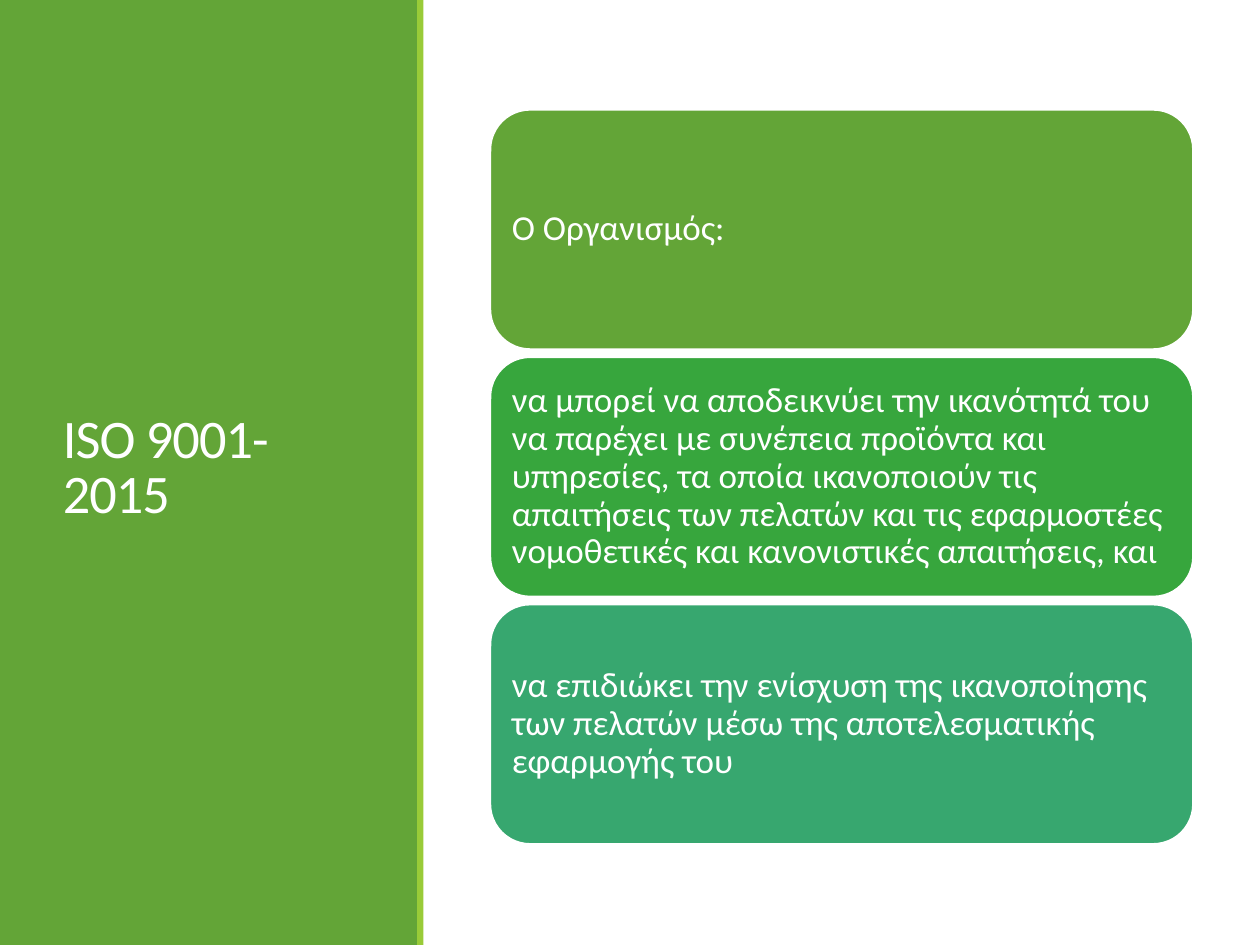
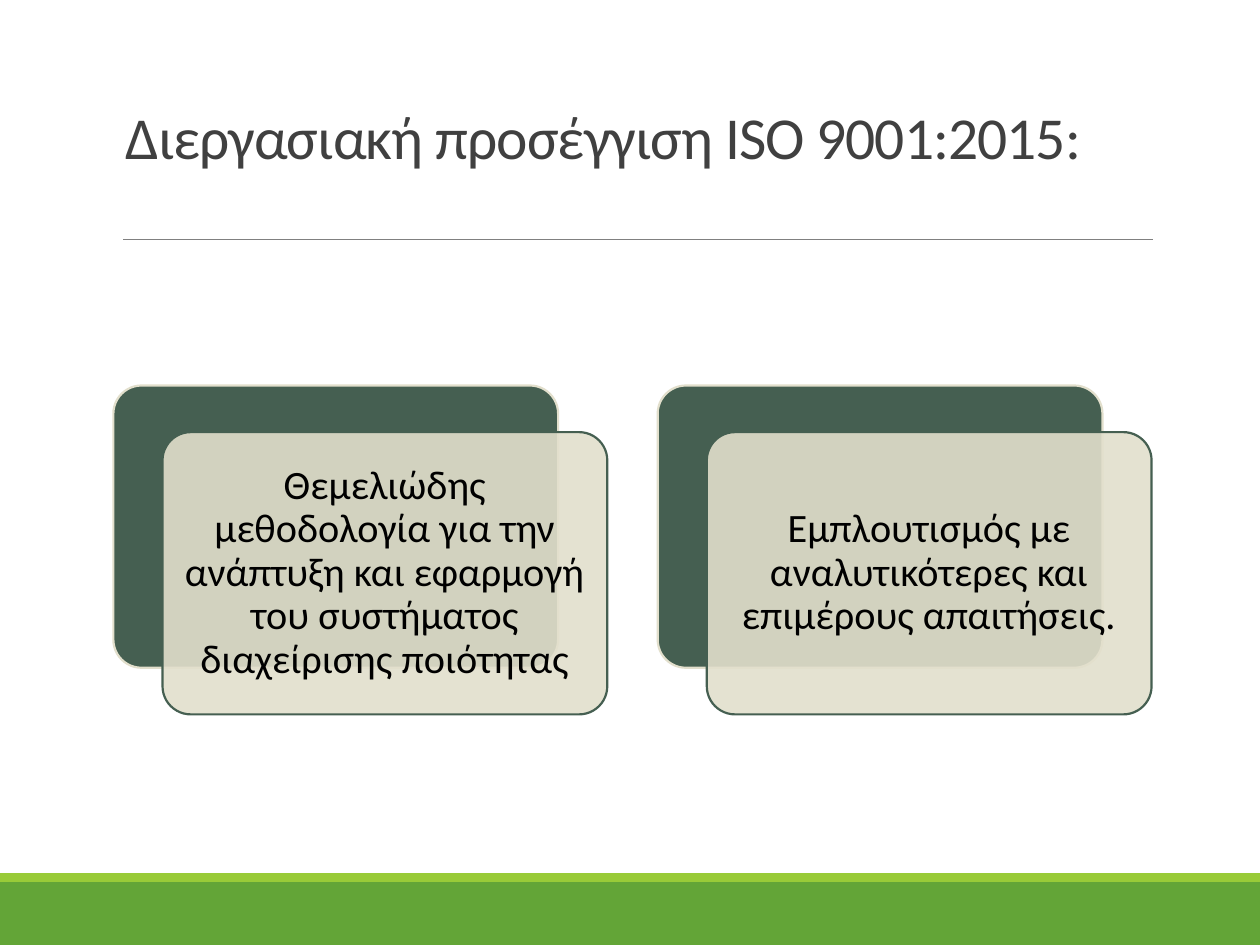
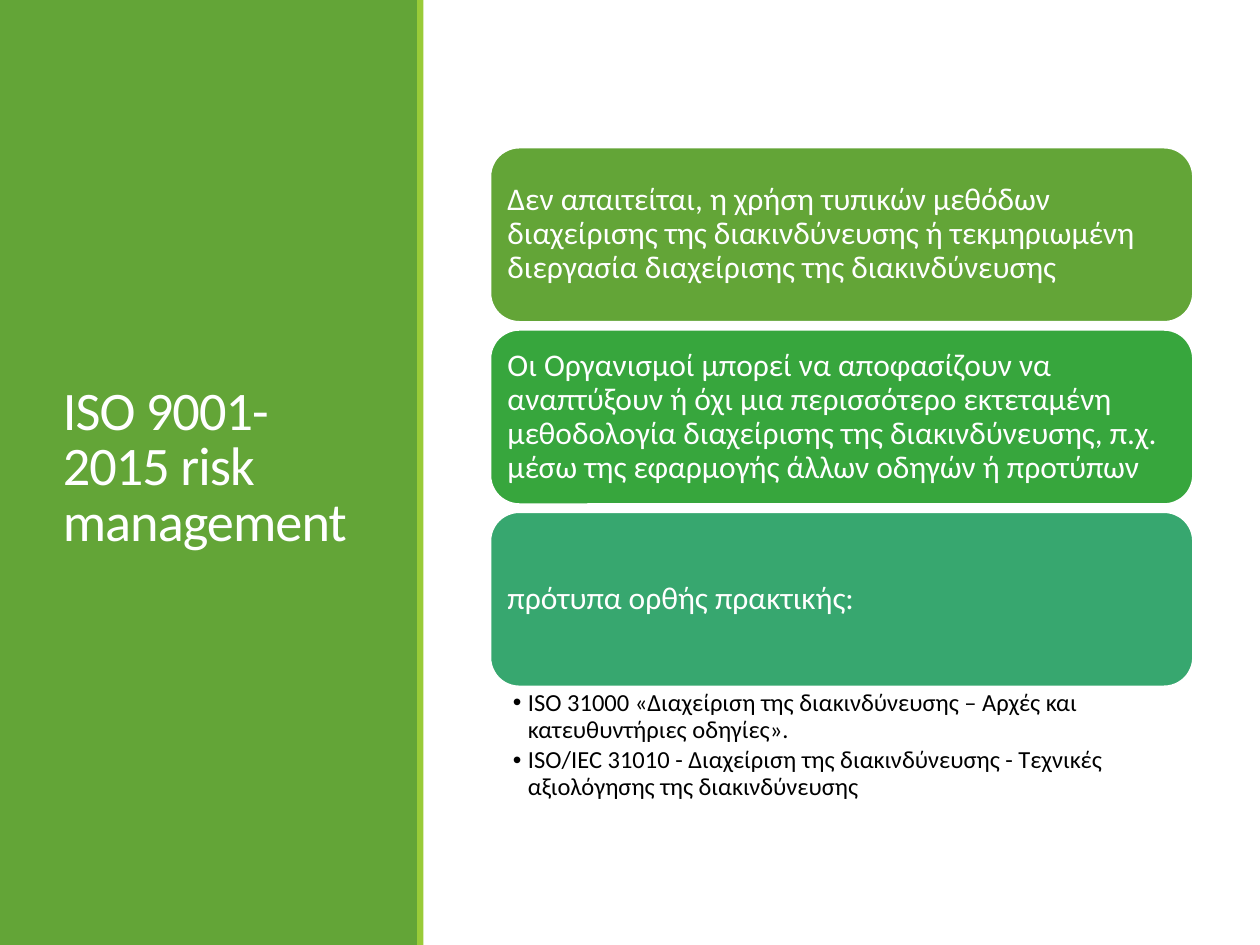
from typing import NamedTuple

from lxml.etree import SubElement
from pptx import Presentation
from pptx.dml.color import RGBColor
from pptx.enum.shapes import MSO_CONNECTOR, MSO_SHAPE
from pptx.enum.text import MSO_ANCHOR, PP_ALIGN
from pptx.oxml.ns import qn
from pptx.util import Inches, Pt

FONT = "Calibri"
CELL = 0.1
COLS, ROWS = 100, 75

GREEN = RGBColor(0x63, 0xA5, 0x37)
LIME = RGBColor(0x99, 0xCB, 0x38)
EMERALD = RGBColor(0x37, 0xA6, 0x3D)
TEAL = RGBColor(0x37, 0xA7, 0x6F)
FOREST = RGBColor(0x45, 0x5F, 0x51)
SAND = RGBColor(0xE2, 0xDF, 0xCC)
WHITE = RGBColor(0xFF, 0xFF, 0xFF)
BLACK = RGBColor(0, 0, 0)
CHARCOAL = RGBColor(0x40, 0x40, 0x40)
GREY = RGBColor(0x80, 0x80, 0x80)
PANEL_FILLS = (GREEN, EMERALD, TEAL)


class Box(NamedTuple):
    """A rectangle measured in grid columns and rows."""
    col: float
    row: float
    cols: float
    rows: float

    def inner(self, col, row, cols, rows):
        """Return a box placed relative to this one."""
        return Box(self.col + col, self.row + row, cols, rows)

    def emu(self):
        """Return left, top, width and height as lengths."""
        return [Inches(v * CELL) for v in self]


PAGE = Box(0, 0, COLS, ROWS)


def add_block(s, box, fill, line=None, kind=MSO_SHAPE.RECTANGLE, corner=None):
    """Draw a filled preset shape with an optional outline."""
    sp = s.shapes.add_shape(kind, *box.emu())
    sp.shadow.inherit = False
    sp.fill.solid()
    sp.fill.fore_color.rgb = fill
    if line is None:
        sp.line.fill.background()
    else:
        sp.line.color.rgb = line
        sp.line.width = Pt(1.25)
    if corner is not None:
        sp.adjustments[0] = corner
    return sp


def set_insets(tf, left, top, right, bottom):
    """Set the four text margins in inches."""
    tf.margin_left, tf.margin_top = Inches(left), Inches(top)
    tf.margin_right, tf.margin_bottom = Inches(right), Inches(bottom)


def write(sp, text, size, color, spacing=0.9, align=PP_ALIGN.LEFT,
          anchor=MSO_ANCHOR.MIDDLE):
    """Put one styled paragraph per line of text into a shape."""
    tf = sp.text_frame
    tf.word_wrap = True
    tf.vertical_anchor = anchor
    tf.text = text
    for p in tf.paragraphs:
        p.alignment = align
        p.line_spacing = spacing
        for r in p.runs:
            r.font.name = FONT
            r.font.size = Pt(size)
            r.font.color.rgb = color
    return tf


def add_title(s, box, text, size, color, anchor=MSO_ANCHOR.MIDDLE):
    """Write a tightly spaced slide title."""
    sp = s.shapes.add_textbox(*box.emu())
    tf = write(sp, text, size, color, spacing=0.85, anchor=anchor)
    for r in tf.paragraphs[0].runs:
        r._r.get_or_add_rPr().set("spc", "-50")


def add_sidebar(s, box, title):
    """Draw the green side band with its title and lime edge."""
    add_block(s, box, GREEN)
    add_title(s, box.inner(4, 5.7, 25.3, 63.1), title, 31, WHITE)
    add_block(s, box.inner(box.cols - 0.1, 0, 0.5, box.rows), LIME)


def add_footer(s, box):
    """Draw the two-tone band at the foot of a slide."""
    edge = 0.7
    add_block(s, box.inner(0, edge, box.cols, box.rows - edge), GREEN)
    add_block(s, box.inner(0, 0, box.cols, edge), LIME)


def add_panels(s, box, texts, size, inset):
    """Stack equal rounded panels in a box."""
    gap = 0.6
    rows = (box.rows - gap * (len(texts) - 1)) / len(texts)
    for i, (text, fill) in enumerate(zip(texts, PANEL_FILLS)):
        panel = box.inner(0, i * (rows + gap), box.cols, rows)
        sp = add_block(s, panel, fill, WHITE, MSO_SHAPE.ROUNDED_RECTANGLE)
        set_insets(write(sp, text, size, WHITE), inset, inset, inset, inset)


def add_bullets(s, box, items):
    """Write a bulleted list under the panels."""
    sp = s.shapes.add_textbox(*box.emu())
    tf = write(sp, "\n".join(items), 14, BLACK, anchor=MSO_ANCHOR.TOP)
    set_insets(tf, 0.18, 0.03, 0.14, 0.03)
    for p in tf.paragraphs:
        p.space_after = Pt(2.5)
        pPr = p._p.get_or_add_pPr()
        pPr.set("marL", str(Inches(0.12)))
        pPr.set("indent", str(-Inches(0.12)))
        SubElement(pPr, qn("a:buFont")).set("typeface", "Arial")
        SubElement(pPr, qn("a:buChar")).set("char", "•")


def add_card(s, box, text):
    """Draw a translucent card over a dark backing card."""
    shift_col, shift_row = 3.9, 3.7
    cols, rows = box.cols - shift_col, box.rows - shift_row
    rounded = MSO_SHAPE.ROUNDED_RECTANGLE
    add_block(s, box.inner(0, 0, cols, rows), FOREST, SAND, rounded, 0.1)
    front = box.inner(shift_col, shift_row, cols, rows)
    sp = add_block(s, front, SAND, FOREST, rounded, 0.1)
    color = sp._element.spPr.find(qn("a:solidFill"))[0]
    SubElement(color, qn("a:alpha")).set("val", "90000")
    tf = write(sp, text, 23, BLACK, align=PP_ALIGN.CENTER)
    set_insets(tf, 0.1, 0.1, 0.1, 0.1)


def add_rule(s, box):
    """Draw a thin line along the top of a box."""
    x, y, w, _ = box.emu()
    cx = s.shapes.add_connector(MSO_CONNECTOR.STRAIGHT, x, y, x + w, y)
    cx.line.color.rgb = GREY
    cx.line.width = Pt(0.5)
    SubElement(cx._element.spPr, qn("a:effectLst"))


def panel_slide(s, box, title, panels, texts, size, inset, bullets=()):
    """Build a slide with a side title, stacked panels and optional bullets."""
    add_sidebar(s, box.inner(0, 0, 33.2, box.rows), title)
    stack = box.inner(38.9, *panels)
    add_panels(s, stack, texts, size, inset)
    if bullets:
        add_bullets(s, stack.inner(0, stack.rows, stack.cols, 9.6), bullets)


def card_slide(s, box, title, texts):
    """Build a slide with a top title and a row of layered cards."""
    add_footer(s, box.inner(0, 69.3, box.cols, 5.7))
    add_rule(s, box.inner(9.8, 19, 81.7, 0))
    add_title(s, box.inner(9, 3.1, 82.5, 11), title, 34, CHARCOAL,
              MSO_ANCHOR.BOTTOM)
    for i, text in enumerate(texts):
        add_card(s, box.inner(9 + i * 43.2, 30.6, 39.2, 26.1), text)


def main():
    """Build and save the presentation."""
    prs = Presentation()
    prs.slide_width, prs.slide_height = Inches(10), Inches(7.5)
    blank = prs.slide_layouts[6]

    panel_slide(prs.slides.add_slide(blank), PAGE, "ISO 9001-2015",
                (8.7, 55.8, 58.3), [
        "Ο Οργανισμός:",
        "να μπορεί να αποδεικνύει την ικανότητά του να παρέχει με συνέπεια "
        "προϊόντα και υπηρεσίες, τα οποία ικανοποιούν τις απαιτήσεις των "
        "πελατών και τις εφαρμοστέες νομoθετικές και κανονιστικές "
        "απαιτήσεις, και",
        "να επιδιώκει την ενίσχυση της ικανοποίησης των πελατών μέσω της "
        "αποτελεσματικής εφαρμογής του",
    ], 20, 0.08)

    card_slide(prs.slides.add_slide(blank), PAGE,
               "Διεργασιακή προσέγγιση ISO 9001:2015:", [
        "Θεμελιώδης μεθοδολογία για την ανάπτυξη και εφαρμογή του "
        "συστήματος διαχείρισης ποιότητας",
        "Εμπλουτισμός με αναλυτικότερες και επιμέρους απαιτήσεις.",
    ])

    panel_slide(prs.slides.add_slide(blank), PAGE,
                "ISO 9001-2015 risk management", (11.7, 55.8, 42.8), [
        "Δεν απαιτείται, η χρήση τυπικών μεθόδων διαχείρισης της "
        "διακινδύνευσης ή τεκμηριωμένη διεργασία διαχείρισης της "
        "διακινδύνευσης",
        "Οι Οργανισμοί μπορεί να αποφασίζουν να αναπτύξουν ή όχι μια "
        "περισσότερο εκτεταμένη μεθοδολογία διαχείρισης της διακινδύνευσης, "
        "π.χ. μέσω της εφαρμογής άλλων οδηγών ή προτύπων",
        "πρότυπα ορθής πρακτικής:",
    ], 18, 0.07, [
        "ISO 31000 «Διαχείριση της διακινδύνευσης – Αρχές και "
        "κατευθυντήριες οδηγίες».",
        "ISO/IEC 31010 - Διαχείριση της διακινδύνευσης - Τεχνικές "
        "αξιολόγησης της διακινδύνευσης",
    ])

    prs.save("out.pptx")


if __name__ == "__main__":
    main()
